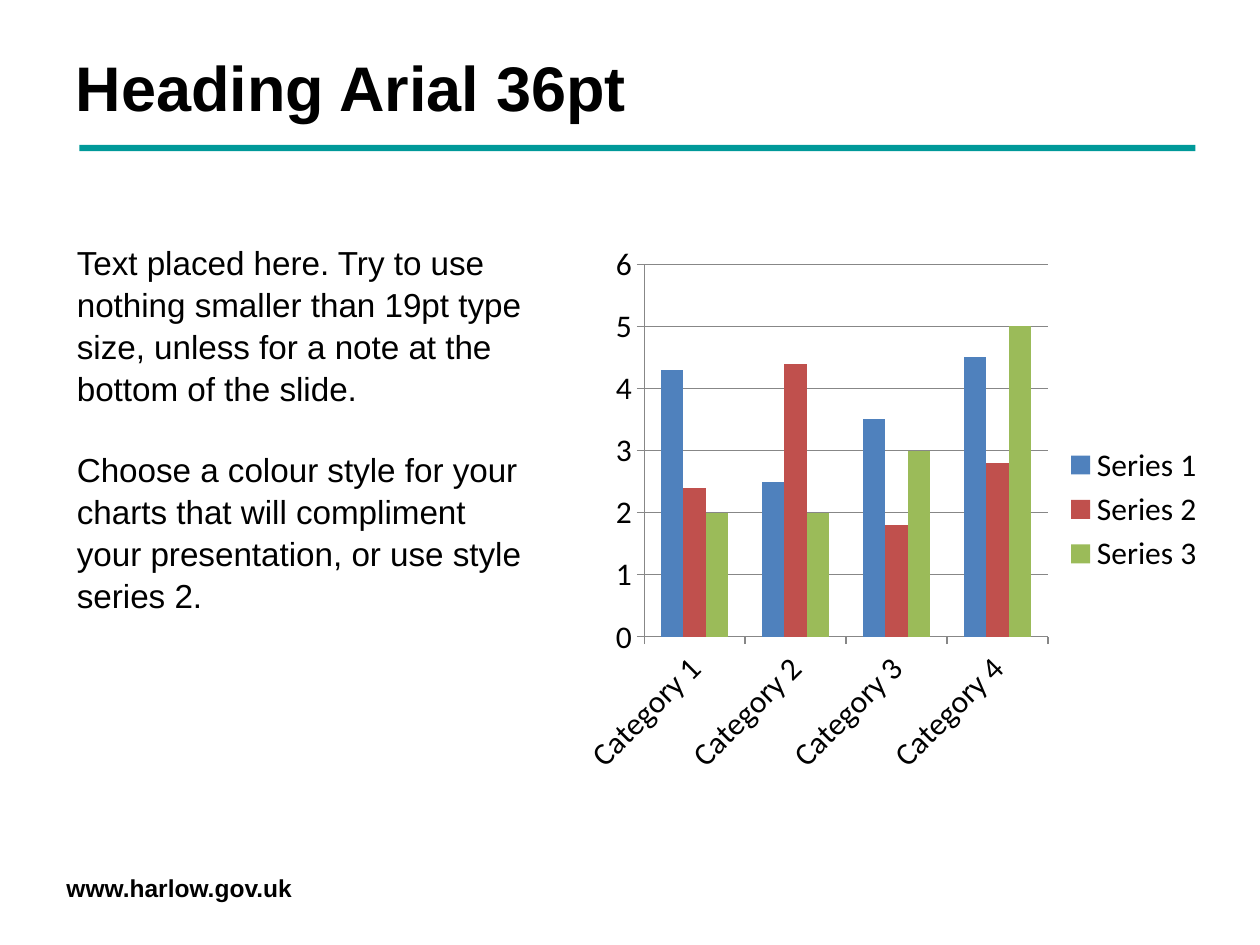
from dataclasses import dataclass

from pptx import Presentation
from pptx.chart.data import CategoryChartData
from pptx.dml.color import RGBColor
from pptx.enum.chart import XL_CHART_TYPE, XL_LEGEND_POSITION, XL_TICK_MARK
from pptx.enum.shapes import MSO_SHAPE
from pptx.enum.text import MSO_ANCHOR, PP_ALIGN
from pptx.util import Cm, Pt


@dataclass(frozen=True)
class Theme:
    font: str = "Arial"
    chart_font: str = "Calibri"
    text: str = "000000"
    accent: str = "009999"
    grid: str = "878787"
    series: tuple = ("4F81BD", "C0504D", "9BBB59")
    heading_size: float = 36
    body_size: float = 19
    chart_size: float = 18
    footer_size: float = 14


THEME = Theme()

PARAGRAPHS = (
    "Text placed here. Try to use nothing smaller than 19pt type size, "
    "unless for a note at the bottom of the slide.",
    "Choose a colour style for your charts that will compliment your "
    "presentation, or use style series 2.",
)
CATEGORIES = [f"Category {n}" for n in range(1, 5)]
SERIES = {
    "Series 1": (4.3, 2.5, 3.5, 4.5),
    "Series 2": (2.4, 4.4, 1.8, 2.8),
    "Series 3": (2, 2, 3, 5),
}


def rgb(colour):
    return RGBColor.from_string(colour)


def set_all(obj, values):
    for name, value in values.items():
        setattr(obj, name, value)


def format_font(font, size, name=THEME.font, bold=False):
    set_all(font, {"name": name, "size": Pt(size), "bold": bold})
    font.color.rgb = rgb(THEME.text)


def place(box):
    return [Cm(length) for length in box]


def add_heading(s, box, text):
    """Title placeholder with a coloured rule along its lower edge."""
    left, top, width, height = box
    title = s.shapes.title
    set_all(title, dict(zip(("left", "top", "width", "height"), place(box))))
    tf = title.text_frame
    set_all(tf, {"text": text, "word_wrap": True,
                 "vertical_anchor": MSO_ANCHOR.MIDDLE})
    p = tf.paragraphs[0]
    set_all(p, {"alignment": PP_ALIGN.LEFT, "line_spacing": 0.9})
    format_font(p.runs[0].font, THEME.heading_size, bold=True)

    rule = s.shapes.add_shape(
        MSO_SHAPE.RECTANGLE,
        *place((left + 0.33, top + height, width - 0.36, 0.13)))
    rule.shadow.inherit = False
    rule.fill.solid()
    rule.fill.fore_color.rgb = rgb(THEME.accent)
    rule.line.fill.background()


def add_text(s, box, paragraphs, size, bold=False, wrap=True,
             spacing=1.0, gap=0):
    """Text box with a gap between its paragraphs."""
    tf = s.shapes.add_textbox(*place(box)).text_frame
    tf.word_wrap = wrap
    for i, text in enumerate(paragraphs):
        p = tf.add_paragraph() if i else tf.paragraphs[0]
        set_all(p, {"line_spacing": spacing, "space_before": Pt(gap if i else 0)})
        r = p.add_run()
        r.text = text
        format_font(r.font, size, bold=bold)


def add_column_chart(s, box):
    """Clustered columns with the legend on the right."""
    data = CategoryChartData()
    data.categories = CATEGORIES
    for name, values in SERIES.items():
        data.add_series(name, values)
    chart = s.shapes.add_chart(
        XL_CHART_TYPE.COLUMN_CLUSTERED, *place(box), data).chart
    set_all(chart, {"has_title": False, "has_legend": True})
    format_font(chart.font, THEME.chart_size, THEME.chart_font)
    set_all(chart.legend, {"position": XL_LEGEND_POSITION.RIGHT,
                           "include_in_layout": False})

    # Axes and gridlines
    for axis, grid in ((chart.category_axis, False), (chart.value_axis, True)):
        set_all(axis, {"has_major_gridlines": grid,
                       "major_tick_mark": XL_TICK_MARK.OUTSIDE})
        axis.format.line.color.rgb = rgb(THEME.grid)
    chart.value_axis.major_gridlines.format.line.color.rgb = rgb(THEME.grid)

    # Columns
    plot = chart.plots[0]
    set_all(plot, {"gap_width": 150, "vary_by_categories": False})
    for series, colour in zip(plot.series, THEME.series):
        series.format.fill.solid()
        series.format.fill.fore_color.rgb = rgb(colour)


def main():
    prs = Presentation()
    set_all(prs, {"slide_width": Cm(25.4), "slide_height": Cm(19.05)})
    s = prs.slides.add_slide(prs.slide_layouts[5])

    add_text(s, (1.09, 17.48, 5.08, 0.86), ["www.harlow.gov.uk"],
             THEME.footer_size, bold=True, wrap=False)
    add_heading(s, (1.27, 0.76, 22.86, 2.16), "Heading Arial 36pt")
    add_text(s, (1.3, 4.72, 9.6, 7.57), PARAGRAPHS, THEME.body_size,
             spacing=1.05, gap=22.8)
    add_column_chart(s, (11.51, 4.72, 13.03, 11.1))

    prs.save("out.pptx")


if __name__ == "__main__":
    main()
